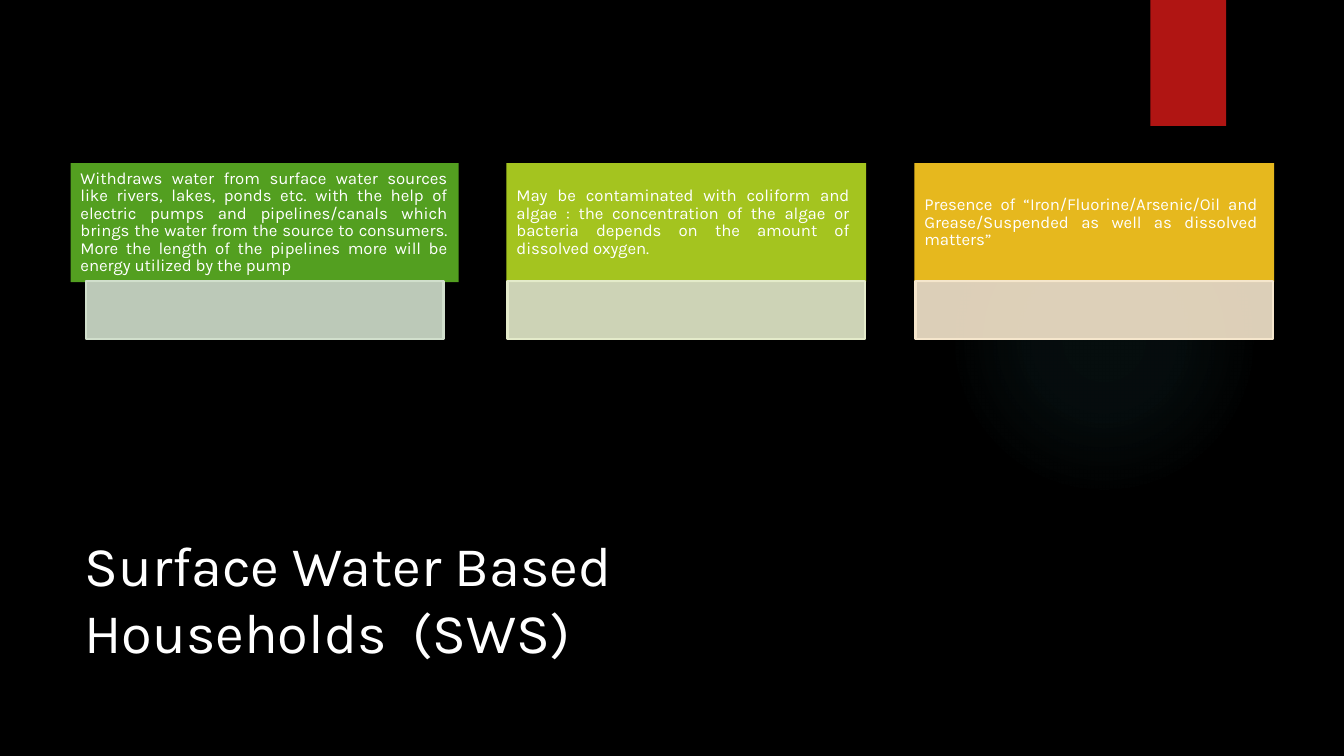
from lxml import etree
from pptx import Presentation
from pptx.dml.color import RGBColor
from pptx.enum.shapes import MSO_SHAPE
from pptx.enum.text import MSO_ANCHOR, PP_ALIGN
from pptx.oxml import parse_xml
from pptx.oxml.ns import qn
from pptx.util import Pt

RECT, OVAL = MSO_SHAPE.RECTANGLE, MSO_SHAPE.OVAL
MIDDLE, TOP = MSO_ANCHOR.MIDDLE, MSO_ANCHOR.TOP
JUSTIFY, LEFT = PP_ALIGN.JUSTIFY, PP_ALIGN.LEFT

BLACK = RGBColor(0x00, 0x00, 0x00)
WHITE = RGBColor(0xFF, 0xFF, 0xFF)
RED = RGBColor(0xB0, 0x15, 0x13)
TEAL = RGBColor(0x50, 0xB9, 0xC1)
GREEN = RGBColor(0x53, 0x9F, 0x20)
PALE_GREEN = RGBColor(0xD1, 0xDF, 0xCC)
LIME = RGBColor(0xA4, 0xC4, 0x1F)
PALE_LIME = RGBColor(0xE4, 0xEB, 0xCA)
AMBER = RGBColor(0xE6, 0xB8, 0x1E)
PALE_AMBER = RGBColor(0xF5, 0xE6, 0xCC)

FONT = "Karla"
A_NS = "http://schemas.openxmlformats.org/drawingml/2006/main"
HEADER_H, PANEL_W, PANEL_H = 85, 255.6, 41.4
CARD_TOP = 116.6
CARDS = [
    (50.4, 277.2, 8, GREEN, PALE_GREEN,
     "Withdraws water from surface water sources like rivers, lakes, ponds etc. "
     "with the help of electric pumps and pipelines/canals which brings the water "
     "from the source to consumers. More the length of the pipelines more will be "
     "energy utilized by the pump"),
    (361.8, 257, 12, LIME, PALE_LIME,
     "May be contaminated with coliform and algae : the concentration of the algae "
     "or bacteria depends on the amount of dissolved oxygen."),
    (653.2, 257, 12, AMBER, PALE_AMBER,
     "Presence of “Iron/Fluorine/Arsenic/Oil and Grease/Suspended as well as "
     "dissolved matters”"),
]


def add_block(s, kind, x, y, w, h, color):
    """Add a flat filled shape without outline."""
    sp = s.shapes.add_shape(kind, Pt(x), Pt(y), Pt(w), Pt(h))
    sp.shadow.inherit = False
    sp.fill.solid()
    sp.fill.fore_color.rgb = color
    sp.line.fill.background()
    return sp


def write(sp, text, size, align, anchor, insets):
    """Write one white paragraph into a shape with the given insets."""
    tf = sp.text_frame
    tf.word_wrap = True
    tf.vertical_anchor = anchor
    tf.margin_left, tf.margin_top, tf.margin_right, tf.margin_bottom = map(Pt, insets)
    p = tf.paragraphs[0]
    p.alignment = align
    r = p.add_run()
    r.text = text
    r._r.get_or_add_rPr().set("spc", "-5")
    p.font.name = FONT
    p.font.size = Pt(size)
    p.font.color.rgb = WHITE
    return p


def add_decor(s, glow_x, glow_y, glow_d, ribbon_x):
    """Add the faint round glow and the red ribbon at the top edge."""
    glow = add_block(s, OVAL, glow_x, glow_y, glow_d, glow_d, TEAL)
    stops = "".join(
        f'<a:gs pos="{pos}000"><a:srgbClr val="{TEAL}"><a:alpha val="{alpha}000"/>'
        f'</a:srgbClr></a:gs>' for pos, alpha in ((0, 7), (36, 6), (69, 0), (100, 0)))
    grad = parse_xml(
        f'<a:gradFill xmlns:a="{A_NS}"><a:gsLst>{stops}</a:gsLst><a:path path="circle">'
        '<a:fillToRect l="50000" t="50000" r="50000" b="50000"/></a:path></a:gradFill>')
    spPr = glow._element.spPr
    spPr.replace(spPr.find(qn("a:solidFill")), grad)
    add_block(s, RECT, ribbon_x, 0, 54, 90, RED)


def add_card(s, x, y, w, right_inset, color, tint, text):
    """Add a text header with a translucent panel centred below it."""
    header = add_block(s, RECT, x, y, w, HEADER_H, color)
    p = write(header, text, 12, JUSTIFY, MIDDLE, (7.2, 0, right_inset, 0))
    p.line_spacing = 0.87
    panel = add_block(s, RECT, x + (w - PANEL_W) / 2, y + HEADER_H - 0.7,
                      PANEL_W, PANEL_H, tint)
    fill = panel._element.spPr.find(qn("a:solidFill"))
    etree.SubElement(fill[0], qn("a:alpha")).set("val", "90000")
    panel.line.color.rgb = tint
    panel.line.width = Pt(1.56)


def add_title(s, x, y, w, h):
    """Add the slide title."""
    sp = s.shapes.add_textbox(Pt(x), Pt(y), Pt(w), Pt(h))
    write(sp, "Surface Water Based Households  (SWS)", 40, LEFT, TOP, (0.7, 1.6, 0, 0))


def main():
    """Build the slide and save it."""
    prs = Presentation()
    prs.slide_width, prs.slide_height = Pt(960), Pt(540)
    s = prs.slides.add_slide(prs.slide_layouts[6])
    s.background.fill.solid()
    s.background.fill.fore_color.rgb = BLACK
    add_decor(s, 677.5, 131.8, 221.8, 821.8)
    add_title(s, 59.8, 377.3, 583.2, 98)
    for x, w, right_inset, color, tint, text in CARDS:
        add_card(s, x, CARD_TOP, w, right_inset, color, tint, text)
    prs.save("out.pptx")


if __name__ == "__main__":
    main()
